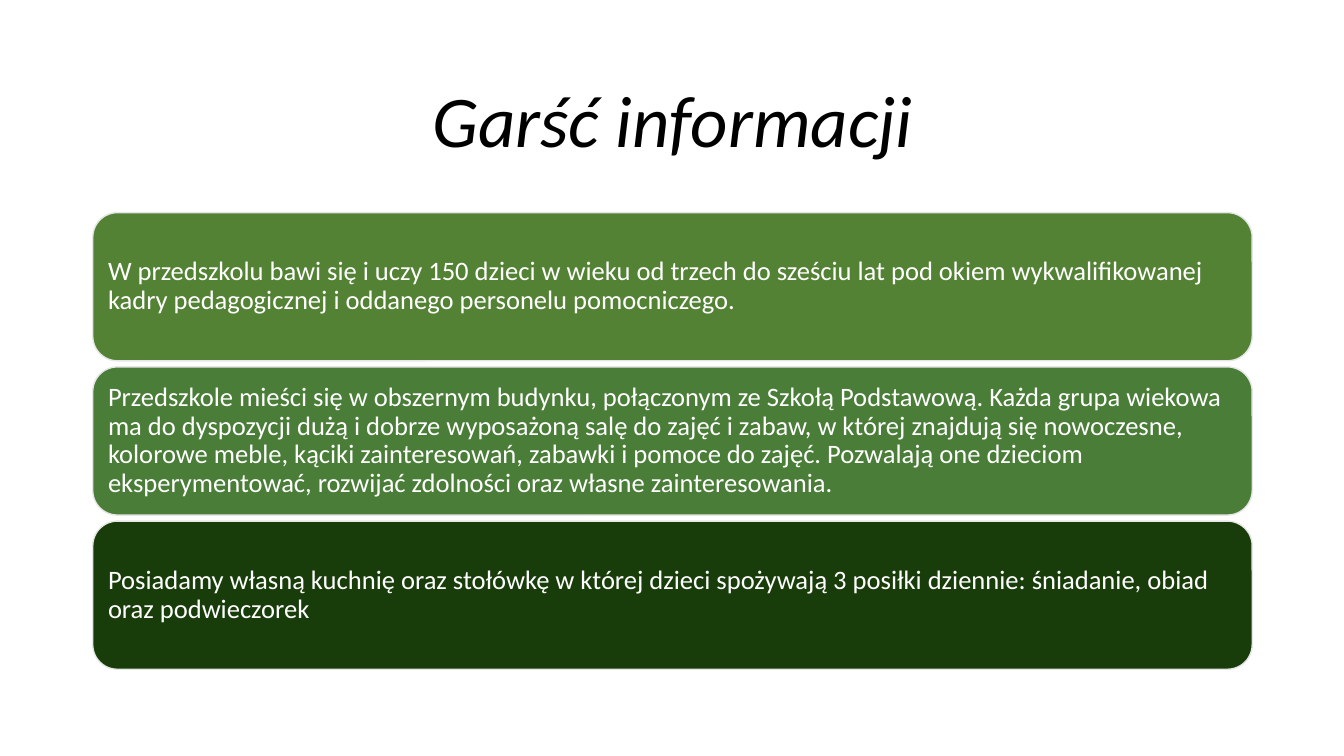
"""Build a slide with a title and three stacked facts about a preschool."""
from pptx import Presentation
from pptx.dml.color import RGBColor
from pptx.enum.shapes import MSO_SHAPE as Shape
from pptx.enum.text import MSO_ANCHOR as Anchor, PP_ALIGN as Align
from pptx.util import Inches, Pt

COLORS = {
    "title": "000000",
    "text": "FFFFFF",
    "edge": "E7E6E6",
    "staff": "548235",
    "rooms": "4A7D37",
    "meals": "183D0A",
}
FACTS = [
    ("staff", "W przedszkolu bawi się i uczy 150 dzieci w wieku od trzech do sześciu lat "
              "pod okiem wykwalifikowanej kadry pedagogicznej i oddanego personelu pomocniczego."),
    ("rooms", "Przedszkole mieści się w obszernym budynku, połączonym ze Szkołą Podstawową. "
              "Każda grupa wiekowa ma do dyspozycji dużą i dobrze wyposażoną salę do zajęć i zabaw, "
              "w której znajdują się nowoczesne, kolorowe meble, kąciki zainteresowań, zabawki "
              "i pomoce do zajęć. Pozwalają one dzieciom eksperymentować, rozwijać zdolności "
              "oraz własne zainteresowania."),
    ("meals", "Posiadamy własną kuchnię oraz stołówkę w której dzieci spożywają 3 posiłki dziennie: "
              "śniadanie, obiad oraz podwieczorek"),
]
LEFT, WIDTH = Inches(0.92), Inches(11.5)
TOP, HEIGHT, STEP = 2.11, 1.47, 1.53


def color(name):
    return RGBColor.from_string(COLORS[name])


def write(frame, text, size, name, align):
    frame.word_wrap = True
    frame.vertical_anchor = Anchor.MIDDLE
    para = frame.paragraphs[0]
    para.alignment = align
    para.line_spacing = 0.9
    run = para.add_run()
    run.text = text
    run.font.name = "Calibri"
    run.font.size = Pt(size)
    run.font.color.rgb = color(name)
    return run


prs = Presentation()
prs.slide_width, prs.slide_height = Inches(13.33), Inches(7.5)
slide = prs.slides.add_slide(prs.slide_layouts[6])

title = slide.shapes.add_textbox(LEFT, Inches(0.61), WIDTH, Inches(1.24))
run = write(title.text_frame, "Garść informacji", 52, "title", Align.CENTER)
run.font.italic = True

for row, (name, text) in enumerate(FACTS):
    card = slide.shapes.add_shape(
        Shape.ROUNDED_RECTANGLE, LEFT, Inches(TOP + row * STEP), WIDTH, Inches(HEIGHT))
    card.shadow.inherit = False
    card.fill.solid()
    card.fill.fore_color.rgb = color(name)
    card.line.color.rgb = color("edge")
    card.line.width = Pt(1)
    frame = card.text_frame
    frame.margin_left = frame.margin_right = Inches(0.08)
    frame.margin_top = frame.margin_bottom = Inches(0.08)
    write(frame, text, 19, "text", Align.LEFT)

prs.save("out.pptx")
